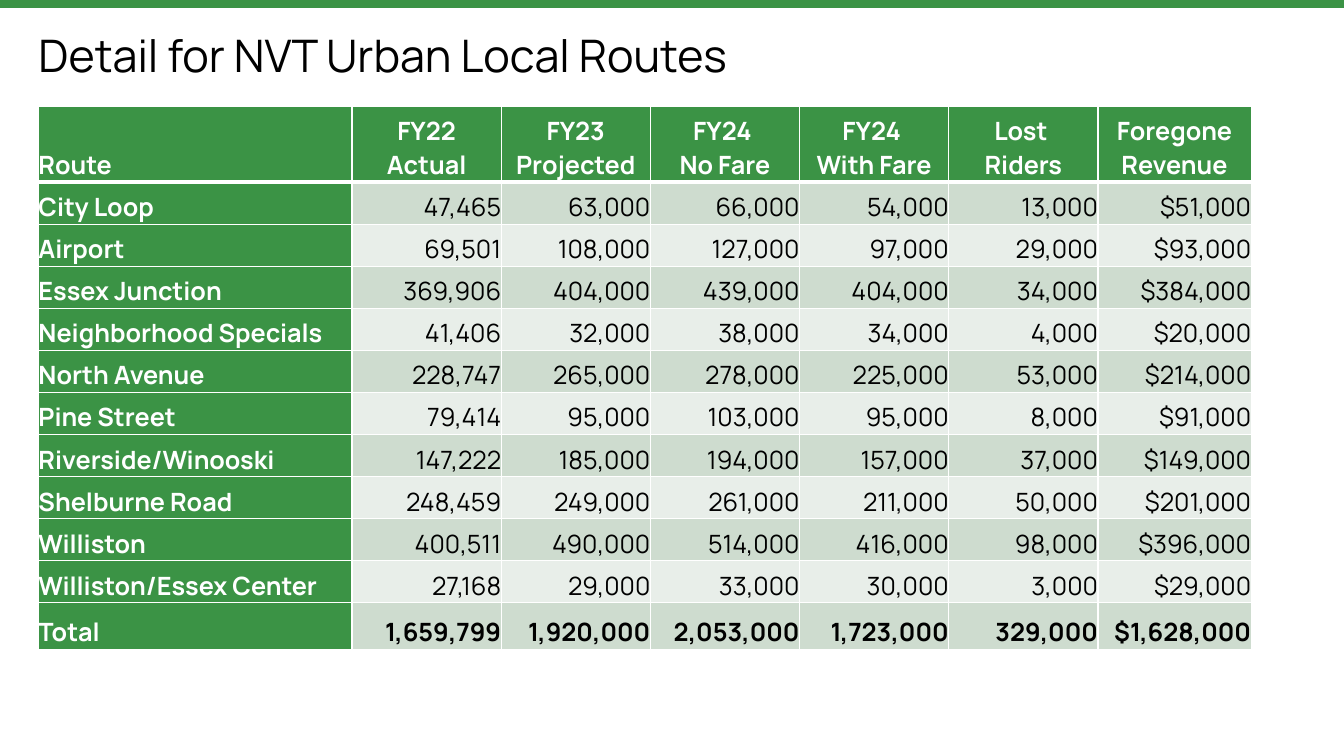
from lxml import etree
from pptx import Presentation
from pptx.dml.color import RGBColor
from pptx.enum.shapes import MSO_SHAPE
from pptx.enum.text import MSO_ANCHOR, MSO_AUTO_SIZE, PP_ALIGN
from pptx.oxml.ns import qn
from pptx.util import Cm, Pt

RECTANGLE = MSO_SHAPE.RECTANGLE
MIDDLE, BOTTOM = MSO_ANCHOR.MIDDLE, MSO_ANCHOR.BOTTOM
LEFT, CENTER, RIGHT = PP_ALIGN.LEFT, PP_ALIGN.CENTER, PP_ALIGN.RIGHT
GROW = MSO_AUTO_SIZE.SHAPE_TO_FIT_TEXT

GREEN = RGBColor(0x3B, 0x93, 0x45)
DARK_BAND = RGBColor(0xCE, 0xDC, 0xCF)
LIGHT_BAND = RGBColor(0xE8, 0xEE, 0xE9)
WHITE = RGBColor(0xFF, 0xFF, 0xFF)
BLACK = RGBColor(0, 0, 0)
FONT = "Manrope"
NO_MARGINS = {"margin_left": 0, "margin_top": 0, "margin_right": 0, "margin_bottom": 0}

ROUTES = [
    ["Route", "FY22\nActual", "FY23 Projected", "FY24 \nNo Fare", "FY24 \nWith Fare",
     "Lost \nRiders", "Foregone Revenue"],
    ["City Loop", "47,465", "63,000", "66,000", "54,000", "13,000", "$51,000"],
    ["Airport", "69,501", "108,000", "127,000", "97,000", "29,000", "$93,000"],
    ["Essex Junction", "369,906", "404,000", "439,000", "404,000", "34,000", "$384,000"],
    ["Neighborhood Specials", "41,406", "32,000", "38,000", "34,000", "4,000", "$20,000"],
    ["North Avenue", "228,747", "265,000", "278,000", "225,000", "53,000", "$214,000"],
    ["Pine Street", "79,414", "95,000", "103,000", "95,000", "8,000", "$91,000"],
    ["Riverside/Winooski", "147,222", "185,000", "194,000", "157,000", "37,000", "$149,000"],
    ["Shelburne Road", "248,459", "249,000", "261,000", "211,000", "50,000", "$201,000"],
    ["Williston", "400,511", "490,000", "514,000", "416,000", "98,000", "$396,000"],
    ["Williston/Essex Center", "27,168", "29,000", "33,000", "30,000", "3,000", "$29,000"],
    ["Total", "1,659,799", "1,920,000", "2,053,000", "1,723,000", "329,000", "$1,628,000"],
]
COLUMN_WIDTHS = [7.9] + [3.76] * 5 + [3.86]
ROW_HEIGHTS = [1.9] + [1.06] * 10 + [1.17]


def set_attributes(target, values):
    for name, value in values.items():
        setattr(target, name, value)


def set_borders(cell, widths):
    properties = cell._tc.get_or_add_tcPr()
    for side, width in widths.items():
        line = etree.SubElement(properties, qn(f"a:ln{side}"), w=str(Pt(width)))
        fill = etree.SubElement(line, qn("a:solidFill"))
        etree.SubElement(fill, qn("a:srgbClr"), val=str(WHITE))


presentation = Presentation()
presentation.slide_width = Cm(33.87)
presentation.slide_height = Cm(19.05)
slide = presentation.slides.add_slide(presentation.slide_layouts[5])

# Top band
band = slide.shapes.add_shape(RECTANGLE, 0, 0, presentation.slide_width, Cm(0.2))
band.shadow.inherit = False
band.fill.solid()
band.fill.fore_color.rgb = GREEN
band.line.fill.background()

# Title
title = slide.shapes.title
set_attributes(title, {"left": Cm(0.97), "top": Cm(0.84),
                       "width": Cm(31.95), "height": Cm(1.22)})
title.text_frame.text = "Detail for NVT Urban Local Routes"
set_attributes(title.text_frame, {**NO_MARGINS, "word_wrap": True,
                                  "vertical_anchor": MIDDLE, "auto_size": GROW})
paragraph = title.text_frame.paragraphs[0]
set_attributes(paragraph, {"alignment": LEFT, "line_spacing": 0.9})
set_attributes(paragraph.font, {"name": FONT, "size": Pt(32), "bold": False})
paragraph.font.color.rgb = BLACK

# Route table
table = slide.shapes.add_table(
    len(ROW_HEIGHTS), len(COLUMN_WIDTHS), Cm(0.97), Cm(2.69),
    Cm(sum(COLUMN_WIDTHS)), Cm(sum(ROW_HEIGHTS))).table
table.first_col = True
for column, width in zip(table.columns, COLUMN_WIDTHS):
    column.width = Cm(width)
for row, height in zip(table.rows, ROW_HEIGHTS):
    row.height = Cm(height)

last_row = len(ROUTES) - 1
for row_index, route in enumerate(ROUTES):
    for column_index, text in enumerate(route):
        is_header = row_index == 0
        is_label = is_header or column_index == 0
        cell = table.cell(row_index, column_index)
        set_attributes(cell, {**NO_MARGINS, "vertical_anchor": BOTTOM, "text": text})
        set_borders(cell, {"L": 1, "R": 1, "T": 3 if row_index == 1 else 1,
                           "B": 3 if is_header else 1})
        cell.fill.solid()
        band_color = DARK_BAND if row_index % 2 else LIGHT_BAND
        cell.fill.fore_color.rgb = GREEN if is_label else band_color
        for paragraph in cell.text_frame.paragraphs:
            if column_index == 0:
                paragraph.alignment = LEFT
            else:
                paragraph.alignment = CENTER if is_header else RIGHT
            set_attributes(paragraph.font, {"name": FONT, "size": Pt(18),
                                            "bold": is_label or row_index == last_row})
            paragraph.font.color.rgb = WHITE if is_label else BLACK

# Total row keeps the dark band
for column_index in range(1, len(COLUMN_WIDTHS)):
    table.cell(last_row, column_index).fill.fore_color.rgb = DARK_BAND

presentation.save("out.pptx")
